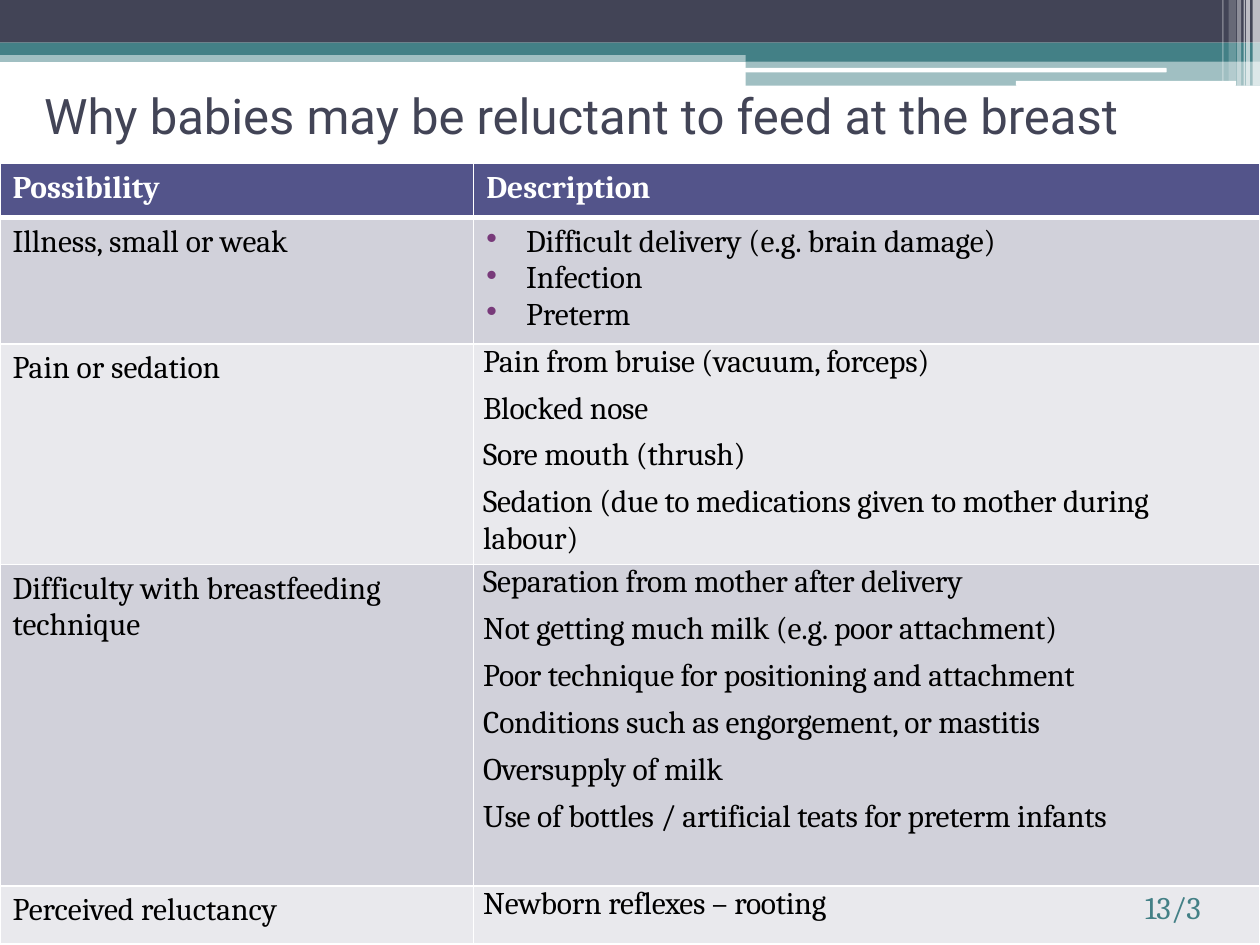
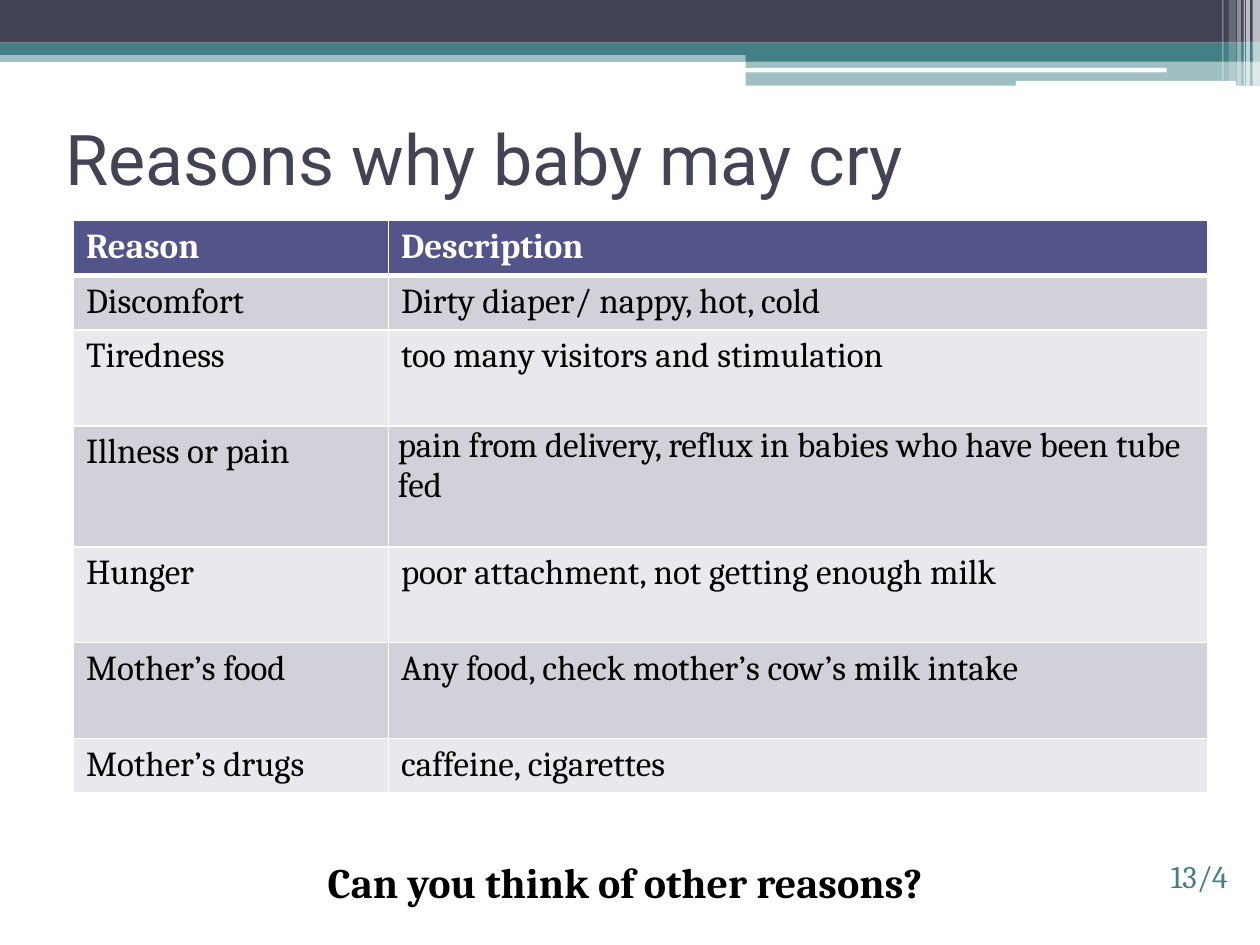
from lxml.etree import SubElement
from pptx import Presentation
from pptx.dml.color import RGBColor
from pptx.enum.shapes import MSO_SHAPE as Shape
from pptx.enum.text import MSO_ANCHOR as Anchor, PP_ALIGN as Align
from pptx.oxml.ns import qn
from pptx.util import Cm, Pt

# Colours and fonts
NAVY = RGBColor(0x42, 0x44, 0x56)
TEAL = RGBColor(0x43, 0x80, 0x86)
WHITE = RGBColor(0xFF, 0xFF, 0xFF)
BLACK = RGBColor(0, 0, 0)
HEADER = RGBColor(0x53, 0x54, 0x8A)
ROW_FILLS = (RGBColor(0xD1, 0xD1, 0xDA), RGBColor(0xE9, 0xE9, 0xED))
BULLET = RGBColor(0x78, 0x3A, 0x7A)
TITLE_FONT, BODY_FONT = "Roboto", "Cambria"

# Content: each cell is (style, paragraphs); a paragraph pair is (tight text, normal text)
RELUCTANCE_ROWS = [
    ("Possibility", ("plain", ["Description"])),
    ("Illness, small or weak", ("bullets", [
        "Difficult delivery (e.g. brain damage)", "Infection", "Preterm"])),
    ("Pain or sedation", ("tight", [
        "Pain from bruise (vacuum, forceps)",
        "Blocked nose",
        "Sore mouth (thrush)",
        "Sedation (due to medications given to mother during labour)"])),
    ("Difficulty with breastfeeding technique", ("tight", [
        "Separation from mother after delivery",
        "Not getting much milk (e.g. poor attachment)",
        "Poor technique for positioning and attachment",
        "Conditions such as engorgement, or mastitis",
        "Oversupply of milk",
        "Use of bottles / artificial teats for preterm infants"])),
    ("Perceived reluctancy", ("tight", ["Newborn reflexes – rooting"])),
]
CRYING_ROWS = [
    ("Reason", ("plain", ["Description"])),
    ("Discomfort", ("plain", ["Dirty diaper/ nappy, hot, cold"])),
    ("Tiredness", ("plain", ["too many visitors and stimulation"])),
    ("Illness or pain", ("tight", [
        ("pain from delivery, reflux ", "in babies who have been tube fed")])),
    ("Hunger", ("plain", ["poor attachment, not getting enough milk"])),
    ("Mother’s food", ("plain", ["Any food, check mother’s cow’s milk intake"])),
    ("Mother’s drugs", ("plain", ["caffeine, cigarettes"])),
]

# All boxes are left, top, width, height in cm
SLIDES = [
    dict(title="Why babies may be reluctant to feed at the breast",
         title_size=28, title_box=(0.64, 0.84, 23.5, 2.97),
         rows=RELUCTANCE_ROWS, text_size=18, table_corner=(0, 3.3),
         columns=(9.55, 15.85), heights=(1.09, 2.49, 4.29, 6.48, 1.17),
         number="13/3", number_box=(21.59, 17.78, 2.87, 1.27)),
    dict(title="Reasons why baby may cry",
         title_size=40, title_box=(1.07, 1.7, 22.86, 2.97),
         rows=CRYING_ROWS, text_size=20, table_corner=(1.48, 4.45),
         columns=(6.35, 16.51), heights=(1.09, 1.09, 1.93, 2.44, 1.93, 1.93, 1.09),
         question="Can you think of other reasons?",
         question_box=(2.34, 17.15, 20.52, 1.27),
         number="13/4", number_box=(21.39, 17.15, 3.61, 1.27)),
]

# Header bands: box, colour, opacity in percent
BANDS = [
    ((0, 1.02, 25.4, 0.23), TEAL, 50),
    ((0, 0, 25.4, 0.86), NAVY, 100),
    ((0, 0.86, 25.4, 0.25), TEAL, 100),
    ((15.03, 0.99, 10.37, 0.25), TEAL, 100),
    ((15.03, 1.23, 10.37, 0.5), TEAL, 50),
]
WHITE_BARS = [(15.02, 1.37, 8.5, 0.09), (20.48, 1.63, 4.44, 0.1)]
# Vertical stripes: left, width, height, opacity
STRIPES = [
    (25.25, 0.15, 1.73, 65), (25.12, 0.08, 1.73, 65), (25.07, 0.03, 1.73, 60),
    (24.94, 0.08, 1.73, 40), (24.77, 0.15, 1.63, 20), (24.64, 0.03, 1.63, 30),
]


def add_band(slide, box, color, opacity=100, kind=Shape.RECTANGLE):
    shape = slide.shapes.add_shape(kind, *map(Cm, box))
    shape.shadow.inherit = False
    shape.line.fill.background()
    shape.fill.solid()
    shape.fill.fore_color.rgb = color
    if opacity < 100:
        color_element = shape.fill._xPr.find(qn("a:solidFill"))[0]
        SubElement(color_element, qn("a:alpha"), val=str(opacity * 1000))


def add_header(slide):
    for box, color, opacity in BANDS:
        add_band(slide, box, color, opacity)
    for box in WHITE_BARS:
        add_band(slide, box, WHITE, kind=Shape.ROUNDED_RECTANGLE)
    for left, width, height, opacity in STRIPES:
        add_band(slide, (left, 0, width, height), WHITE, opacity)


def set_font(paragraph, size, color, bold=False, name=BODY_FONT):
    font = paragraph.font
    font.name, font.size, font.bold = name, Pt(size), bold
    font.color.rgb = color


def add_text(slide, text, box, size, color, align=Align.LEFT, anchor=Anchor.TOP,
             bold=False, name=BODY_FONT):
    frame = slide.shapes.add_textbox(*map(Cm, box)).text_frame
    frame.word_wrap = True
    frame.vertical_anchor = anchor
    paragraph = frame.paragraphs[0]
    paragraph.text = text
    paragraph.alignment = align
    set_font(paragraph, size, color, bold, name)


def add_bullet(paragraph):
    properties = paragraph._p.get_or_add_pPr()
    properties.set("marL", str(Cm(0.8)))
    properties.set("indent", str(-Cm(0.8)))
    color = SubElement(properties, qn("a:buClr"))
    SubElement(color, qn("a:srgbClr"), val=str(BULLET))
    SubElement(properties, qn("a:buChar"), char="•")


def set_borders(cell, row):
    properties = cell._tc.get_or_add_tcPr()
    top = 3 if row == 1 else 1
    bottom = 3 if row == 0 else 1
    for side, width in (("L", 1), ("R", 1), ("T", top), ("B", bottom)):
        line = SubElement(properties, qn(f"a:ln{side}"), w=str(Pt(width)))
        fill = SubElement(line, qn("a:solidFill"))
        SubElement(fill, qn("a:srgbClr"), val=str(WHITE))


def fill_cell(cell, row, style, paragraphs, size):
    is_header = row == 0
    set_borders(cell, row)
    cell.fill.solid()
    cell.fill.fore_color.rgb = HEADER if is_header else ROW_FILLS[(row - 1) % 2]
    if style == "tight":
        cell.margin_left = cell.margin_right = Cm(0.19)
        cell.margin_top = cell.margin_bottom = 0
    frame = cell.text_frame
    for index, text in enumerate(paragraphs):
        paragraph = frame.add_paragraph() if index else frame.paragraphs[0]
        parts = (text,) if isinstance(text, str) else text
        for part in parts:
            paragraph.add_run().text = part
        if style == "bullets":
            add_bullet(paragraph)
        if style == "tight":
            paragraph.runs[0].font._rPr.set("spc", "-10")
            paragraph.space_before = Pt(6)
        set_font(paragraph, size, WHITE if is_header else BLACK, is_header)


def add_grid(slide, rows, corner, columns, heights, size):
    frame = slide.shapes.add_table(len(rows), len(columns), *map(Cm, corner),
                                   Cm(sum(columns)), Cm(sum(heights)))
    table = frame.table
    for column, width in zip(table.columns, columns):
        column.width = Cm(width)
    for row, (label, description) in enumerate(rows):
        table.rows[row].height = Cm(heights[row])
        fill_cell(table.cell(row, 0), row, "plain", [label], size)
        fill_cell(table.cell(row, 1), row, *description, size)


def main():
    presentation = Presentation()
    presentation.slide_width, presentation.slide_height = Cm(25.4), Cm(19.05)
    for page in SLIDES:
        slide = presentation.slides.add_slide(presentation.slide_layouts[6])
        add_header(slide)
        add_text(slide, page["title"], page["title_box"], page["title_size"], NAVY,
                 anchor=Anchor.MIDDLE, name=TITLE_FONT)
        add_grid(slide, page["rows"], page["table_corner"], page["columns"],
                 page["heights"], page["text_size"])
        if "question" in page:
            add_text(slide, page["question"], page["question_box"], 24, BLACK,
                     Align.CENTER, bold=True)
        add_text(slide, page["number"], page["number_box"], 18, TEAL, Align.RIGHT)
    presentation.save("out.pptx")


if __name__ == "__main__":
    main()
